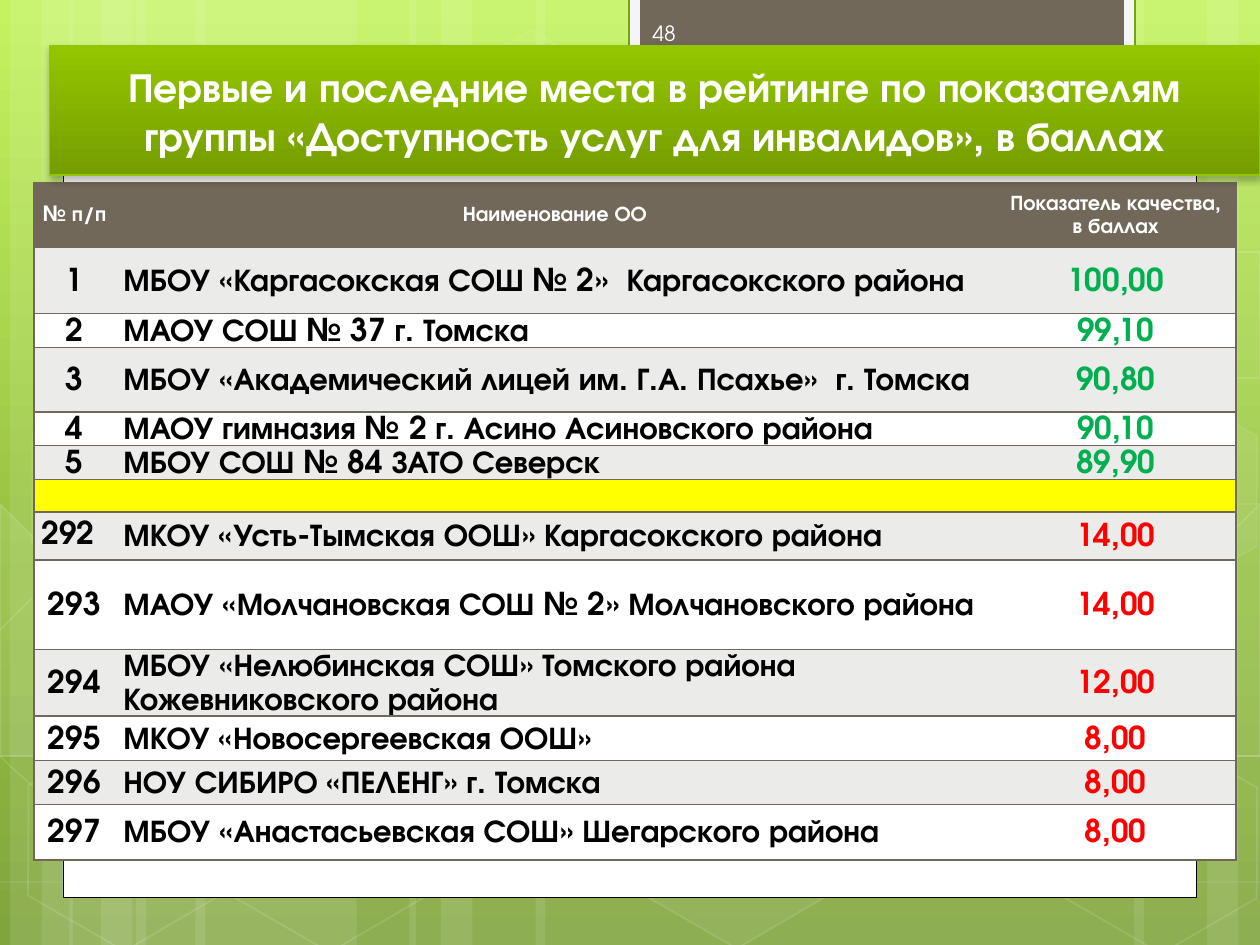
import pptx
import pptx.dml.color
import pptx.enum.shapes
import pptx.enum.text
import pptx.oxml
import pptx.oxml.ns
import pptx.util
from pptx.util import Inches, Pt

FONT = "TeX Gyre Adventor"
HUE = {"white": "FFFFFF", "black": "000000", "brown": "71685A", "band": "EBEBEA",
       "good": "00B050", "bad": "FF0000", "gap": "FFFF00", "number": "FEFEFE",
       "frame": "F5F5F5", "edge": "74A510", "lime": "94C600", "moss": "769D00",
       "sky": "C3F35F", "leaf": "93BF3F", "grass": "81A53E"}

TITLE = ("Первые и последние места в рейтинге по показателям "
         "группы «Доступность услуг для инвалидов», в баллах")
HEAD = ("№ п/п", "Наименование ОО", "Показатель качества, в баллах")
BEST = [("1", "МБОУ «Каргасокская СОШ № 2»  Каргасокского района", "100,00"),
        ("2", "МАОУ СОШ № 37 г. Томска", "99,10"),
        ("3", "МБОУ «Академический лицей им. Г.А. Псахье»  г. Томска", "90,80"),
        ("4", "МАОУ гимназия № 2 г. Асино Асиновского района", "90,10"),
        ("5", "МБОУ СОШ № 84 ЗАТО Северск", "89,90")]
WORST = [("292", "МКОУ «Усть-Тымская ООШ» Каргасокского района", "14,00"),
         ("293", "МАОУ «Молчановская СОШ № 2» Молчановского района", "14,00"),
         ("294", "МБОУ «Нелюбинская СОШ» Томского района Кожевниковского района", "12,00"),
         ("295", "МКОУ «Новосергеевская ООШ»", "8,00"),
         ("296", "НОУ СИБИРО «ПЕЛЕНГ» г. Томска", "8,00"),
         ("297", "МБОУ «Анастасьевская СОШ» Шегарского района", "8,00")]
WIDTHS = (0.64, 6.99, 1.91)
HEIGHTS = (0.51, 0.53, 0.27, 0.51, 0.26, 0.27, 0.26, 0.38, 0.71, 0.53, 0.35, 0.35, 0.44)

# Backdrop: full-height stripes (left, width)
STRIPES = [(1.08, 1.75), (0.08, 0.5), (0.33, 0.83), (1.55, 1.75), (0.55, 0.5), (0.8, 0.83),
           (7.33, 1.75), (9.58, 0.5), (9, 0.83), (4.25, 3.08), (3.25, 0.5), (3.5, 0.83)]
# Waves: a start point, then three points for each Bezier piece
WAVES = [
    [(0.07, 6.73), (0.61, 6.76), (1.15, 6.79), (1.9, 6.78), (2.65, 6.77), (3.58, 6.75),
     (4.58, 6.65), (5.58, 6.55), (7, 6.36), (7.92, 6.17), (8.83, 5.98), (9.77, 5.68), (10.07, 5.51)],
    [(0.07, 4.77), (0.36, 4.61), (0.65, 4.46), (1.21, 4.31), (1.78, 4.16), (2.59, 3.94),
     (3.47, 3.87), (4.36, 3.8), (5.44, 3.79), (6.54, 3.87), (7.64, 3.95), (9.47, 4.26), (10.07, 4.34)],
    [(0.06, 6.17), (1.27, 6.72), (2.47, 7.27), (3.34, 7.49)],
    [(0.07, 5.78), (0.38, 5.89), (0.7, 6), (1.28, 6.16), (1.86, 6.31), (2.73, 6.56),
     (3.57, 6.73), (4.4, 6.9), (5.45, 7.08), (6.28, 7.18), (7.11, 7.29), (8, 7.33),
     (8.53, 7.36), (9.05, 7.4), (9.19, 7.38), (9.45, 7.38), (9.71, 7.37), (9.89, 7.35), (10.07, 7.34)],
    [(2.42, 7.49), (2.6, 7.29), (2.78, 7.09), (3.02, 6.91), (3.26, 6.73), (3.6, 6.53),
     (3.88, 6.39), (4.16, 6.25), (4.33, 6.19), (4.7, 6.09), (5.06, 5.99), (5.73, 5.85),
     (6.08, 5.78), (6.44, 5.71), (6.49, 5.71), (6.8, 5.69), (7.11, 5.66), (7.6, 5.63),
     (7.94, 5.62), (8.29, 5.61), (8.86, 5.62), (9.53, 5.62), (9.71, 5.63), (9.88, 5.64), (10.06, 5.66)]]
# Hexagons: left, top, fill opacity, line opacity
HEXES = [(3.34, 0.36, 4, 8), (4.97, 5.89, 6, 12), (0.11, 5.91, None, 12), (0.14, 3.12, 7, 8),
         (1.74, 5.92, None, 12), (7.53, 4.53, 10, 12), (8.34, 5.93, None, 12), (8.34, 3.14, 7, 8)]
# Hexagons cut by the slide edge: fill opacity, corners
CUTS = [(10, [(0.08, 4.45), (0.19, 4.38), (0.96, 4.82), (0.95, 5.7), (0.2, 6.14), (0.08, 6.07)]),
        (4, [(9.26, 4.85), (10.01, 4.41), (10.09, 4.46), (10.09, 6.13), (10.02, 6.17), (9.26, 5.73)]),
        (None, [(9.26, 2.07), (10.01, 1.63), (10.1, 1.68), (10.09, 3.35), (10.02, 3.39), (9.26, 2.95)])]

NS = pptx.oxml.ns.nsdecls("a")
qn = pptx.oxml.ns.qn
KIND = pptx.enum.shapes.MSO_SHAPE
ALIGN = pptx.enum.text.PP_ALIGN
MIDDLE = pptx.enum.text.MSO_ANCHOR.MIDDLE


def rgb(name):
    return pptx.dml.color.RGBColor.from_string(HUE[name])


def tint(fill, root, name, alpha):
    fill.solid()
    fill.fore_color.rgb = rgb(name)
    if alpha:
        for color in root.iter(qn("a:srgbClr")):
            color.append(pptx.oxml.parse_xml(f'<a:alpha {NS} val="{alpha * 1000}"/>'))


def style(shape, fill=None, alpha=None, line=None, width=1, fade=None):
    shape.shadow.inherit = False
    shape.line.fill.background()
    if fill:
        tint(shape.fill, shape._element.spPr, fill, alpha)
    else:
        shape.fill.background()
    if line:
        shape.line.width = Pt(width)
        tint(shape.line.fill, shape._element.spPr.find(qn("a:ln")), line, fade)
    return shape


def ramp(fill, root, stops):
    fill.gradient()
    fill.gradient_angle = 270
    chain = next(root.iter(qn("a:gsLst")))
    for old in list(chain):
        chain.remove(old)
    for place, name in stops:
        chain.append(pptx.oxml.parse_xml(
            f'<a:gs {NS} pos="{place * 1000}"><a:srgbClr val="{HUE[name]}"/></a:gs>'))


def write(frame, text, size=18, color="black", bold=True, align=ALIGN.CENTER, space=None):
    frame.word_wrap = True
    para = frame.paragraphs[0]
    para.alignment, para.line_spacing = align, space
    run = para.add_run()
    run.text = text
    font = run.font
    font.name, font.size, font.bold = FONT, Pt(size), bold
    font.color.rgb = rgb(color)


def outline(points, close):
    pen = shapes.build_freeform(*points[0], scale=Inches(1))
    pen.add_line_segments(points[1:], close=close)
    return pen.convert_to_shape()


def bend(shape):
    """Turn each three straight pieces into one Bezier piece."""
    legs = list(shape._element.iter(qn("a:lnTo")))
    for i in range(0, len(legs), 3):
        arc = pptx.oxml.parse_xml(f"<a:cubicBezTo {NS}/>")
        legs[i].addprevious(arc)
        for leg in legs[i:i + 3]:
            arc.append(leg[0])
            leg.getparent().remove(leg)
    return shape


def add(kind, *place):
    return shapes.add_shape(kind, *map(Inches, place))


def border(cell, sides):
    for side in "LRTB":
        ink = f'<a:solidFill><a:srgbClr val="{HUE["brown"]}"/></a:solidFill>' if side in sides else "<a:noFill/>"
        cell._tc.get_or_add_tcPr().append(pptx.oxml.parse_xml(
            f'<a:ln{side} {NS} w="12700">{ink}</a:ln{side}>'))


deck = pptx.Presentation()
deck.slide_width, deck.slide_height = Inches(10), Inches(7.5)
slide = deck.slides.add_slide(deck.slide_layouts[5])
shapes = slide.shapes
ramp(slide.background.fill, slide._element, [(0, "sky"), (62, "leaf"), (100, "grass")])

# Backdrop
for left, width in STRIPES:
    style(add(KIND.RECTANGLE, left, 0, width, 7.5), "white", 10)
for wave in WAVES:
    style(bend(outline(wave, False)), line="white", width=0.5, fade=20)
for left, top, alpha, fade in HEXES:
    hexagon = add(KIND.HEXAGON, left, top, 1.75, 1.52)
    hexagon.adjustments[0] = 0.285
    hexagon.rotation = 30
    style(hexagon, alpha and "white", alpha, "white", 1, fade)
for alpha, points in CUTS:
    style(outline(points, True), alpha and "white", alpha, "white", 1, 12)

# White panel and page tab
style(add(KIND.RECTANGLE, 0.5, 0.36, 9, 6.76), "white", line="black", width=0.5)
style(add(KIND.RECTANGLE, 4.99, -0.02, 4.02, 0.76), "frame", line="edge", width=1.25)
style(add(KIND.RECTANGLE, 5.08, -0.02, 3.84, 0.68), "brown")
page = shapes.add_textbox(*map(Inches, (5.08, 0.06, 1.46, 0.4))).text_frame
page.vertical_anchor = MIDDLE
write(page, "48", size=12, color="number", bold=False, align=ALIGN.LEFT)

# Rating table
rows = [HEAD, *BEST, ("", "", ""), *WORST]
gap = len(BEST) + 1
table = shapes.add_table(len(rows), 3, *map(Inches, (0.27, 1.45, sum(WIDTHS), sum(HEIGHTS)))).table
for column, width in zip(table.columns, WIDTHS):
    column.width = Inches(width)
for r, (row, height) in enumerate(zip(rows, HEIGHTS)):
    table.rows[r].height = Inches(height)
    size = 18 if r else 12
    back = "brown" if r == 0 else "gap" if r == gap else "band" if r % 2 else "white"
    for c, text in enumerate(row):
        cell = table.cell(r, c)
        border(cell, "TB" + ("L", "", "R")[c])
        cell.fill.solid()
        cell.fill.fore_color.rgb = rgb(back)
        cell.vertical_anchor = MIDDLE
        cell.margin_left = cell.margin_right = Inches(0.07 if r and c else 0.06)
        cell.margin_top = cell.margin_bottom = 0
        if not text:
            cell.text_frame.paragraphs[0]._p.get_or_add_endParaRPr().set("sz", "1000")
            continue
        score = "good" if r < gap else "bad"
        first = r == gap + 1 and c == 0
        write(cell.text_frame, text, size=size,
              color="white" if r == 0 else score if c == 2 else "black",
              align=ALIGN.LEFT if first or (r and c == 1) else ALIGN.CENTER,
              space=None if first else Pt(size * 1.06))

# Title banner, in front of everything
title = shapes.title
title.left, title.top, title.width, title.height = map(Inches, (0.39, 0.36, 9.61, 1.03))
ramp(title.fill, title._element, [(0, "lime"), (100, "moss")])
title.line.width = Pt(0.75)
title.line.color.rgb = rgb("lime")
title._element.spPr.append(pptx.oxml.parse_xml(
    f'<a:effectLst {NS}><a:outerShdw blurRad="50800" dist="25400" dir="5400000" rotWithShape="0">'
    f'<a:srgbClr val="{HUE["black"]}"><a:alpha val="28000"/></a:srgbClr></a:outerShdw></a:effectLst>'))
title.text_frame.auto_size = pptx.enum.text.MSO_AUTO_SIZE.NONE
title.text_frame.vertical_anchor = MIDDLE
write(title.text_frame, TITLE, size=23.4, color="white")
shapes._spTree.append(title._element)

deck.save("out.pptx")
